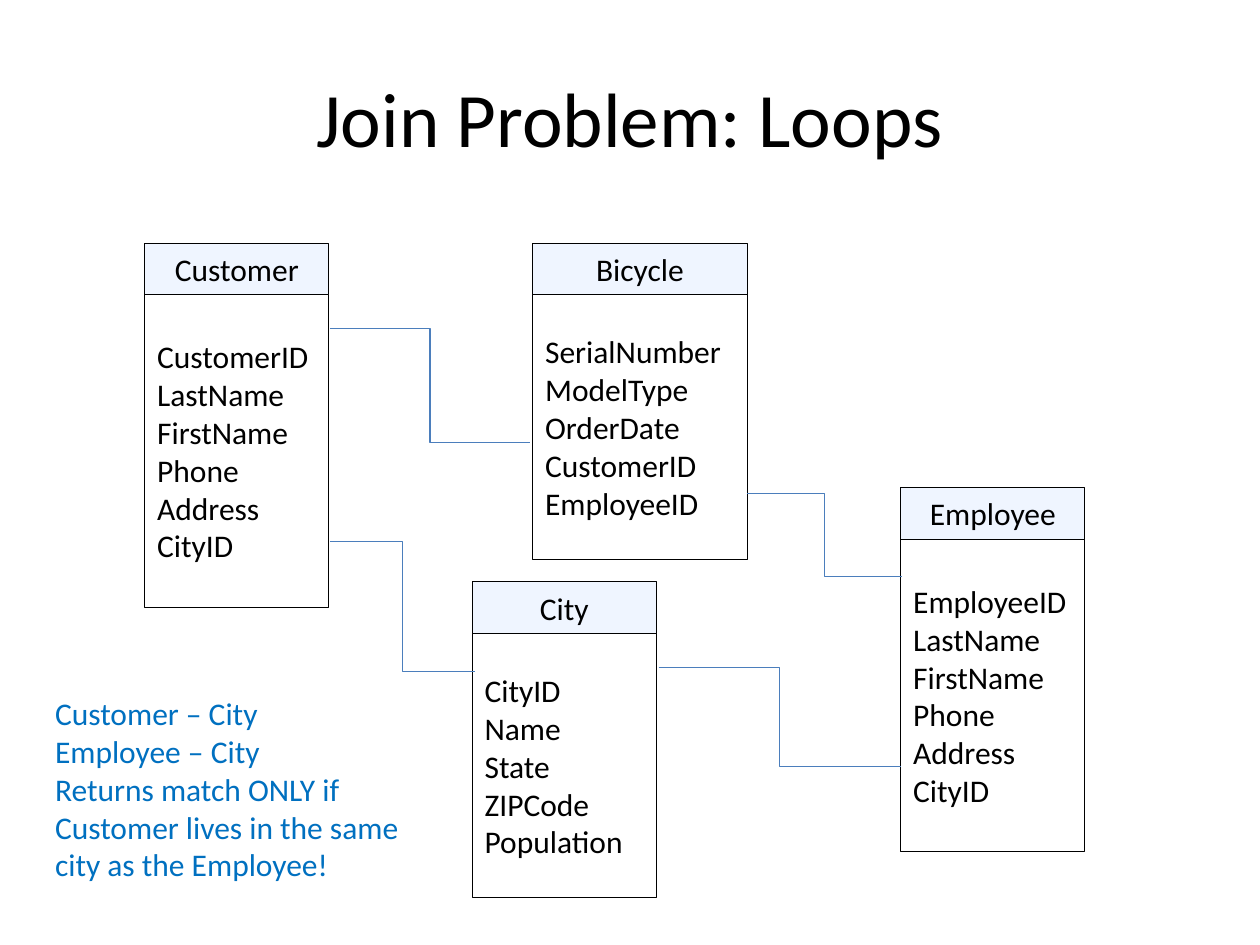
from lxml.etree import SubElement
from pptx import Presentation
from pptx.dml.color import RGBColor
from pptx.enum.shapes import MSO_CONNECTOR as Link, MSO_SHAPE as Shape
from pptx.enum.text import MSO_ANCHOR as Anchor, MSO_AUTO_SIZE as AutoSize, PP_ALIGN as Align
from pptx.oxml.ns import qn
from pptx.util import Cm, Pt

# Content
TITLE = "Join Problem: Loops"
PERSON_FIELDS = ["LastName", "FirstName", "Phone", "Address", "CityID"]
# name, left, top, width (cm), fields
ENTITIES = [
    ("Customer", 2.92, 4.9, 3.71, ["CustomerID"] + PERSON_FIELDS),
    ("Bicycle", 10.74, 4.9, 4.32,
     ["SerialNumber", "ModelType", "OrderDate", "CustomerID", "EmployeeID"]),
    ("City", 9.52, 11.73, 3.71,
     ["CityID", "Name", "State", "ZIPCode", "Population"]),
    ("Employee", 18.16, 9.83, 3.71, ["EmployeeID"] + PERSON_FIELDS),
]
# start x, start y, end x, end y (cm)
JOINS = [
    (6.65, 6.63, 10.69, 8.92),    # Customer to Bicycle
    (15.06, 9.95, 18.19, 11.62),  # Bicycle to Employee
    (6.65, 10.92, 9.58, 13.54),   # Customer to City
    (13.28, 13.46, 18.16, 15.45), # City to Employee
]
NOTE = [
    "Customer – City",
    "Employee – City",
    "Returns match ONLY if Customer lives in the same city as the Employee!",
]

COLORS = {"text": "000000", "border": "000000", "header": "EFF5FF",
          "join": "4B7EBC", "note": "0070C0"}
FONT = "Calibri"
HEADER_HEIGHT = 1.04
ROW_HEIGHT = 0.97
BODY_PADDING = -0.48


def color(name):
    return RGBColor.from_string(COLORS[name])


def write(frame, lines, size=18, ink="text", align=Align.LEFT):
    frame.word_wrap = True
    for index, line in enumerate(lines):
        para = frame.paragraphs[0] if index == 0 else frame.add_paragraph()
        para.text = line
        para.alignment = align
        para.font.size = Pt(size)
        para.font.name = FONT
        para.font.color.rgb = color(ink)


def add_box(slide, left, top, width, height, lines, fill=None, align=Align.LEFT):
    box = slide.shapes.add_shape(
        Shape.RECTANGLE, Cm(left), Cm(top), Cm(width), Cm(height))
    box.shadow.inherit = False
    if fill:
        box.fill.solid()
        box.fill.fore_color.rgb = color(fill)
    else:
        box.fill.background()
    box.line.color.rgb = color("border")
    box.line.width = Pt(0.5)
    box.text_frame.vertical_anchor = Anchor.MIDDLE
    write(box.text_frame, lines, align=align)


def add_entity(slide, name, left, top, width, fields):
    body_height = ROW_HEIGHT * len(fields) - BODY_PADDING
    add_box(slide, left, top + HEADER_HEIGHT, width, body_height, fields)
    add_box(slide, left, top, width, HEADER_HEIGHT, [name], "header", Align.CENTER)


def add_join(slide, *ends):
    join = slide.shapes.add_connector(Link.ELBOW, *[Cm(end) for end in ends])
    join.line.color.rgb = color("join")
    join.line.width = Pt(0.75)
    SubElement(join.element.spPr, qn("a:effectLst"))


def main():
    deck = Presentation()
    deck.slide_width, deck.slide_height = Cm(25.4), Cm(19.05)
    slide = deck.slides.add_slide(deck.slide_layouts[5])

    # Title
    title = slide.shapes.title
    title.left, title.top, title.width, title.height = (
        Cm(1.27), Cm(0.76), Cm(22.86), Cm(3.18))
    title.text_frame.vertical_anchor = Anchor.MIDDLE
    write(title.text_frame, [TITLE], size=44, align=Align.CENTER)

    # Tables of the data model and their joins
    for entity in ENTITIES:
        add_entity(slide, *entity)
    for join in JOINS:
        add_join(slide, *join)

    # Note
    note = slide.shapes.add_textbox(Cm(0.86), Cm(13.87), Cm(7.44), Cm(4.11))
    write(note.text_frame, NOTE, ink="note")
    note.text_frame.auto_size = AutoSize.SHAPE_TO_FIT_TEXT

    deck.save("out.pptx")


if __name__ == "__main__":
    main()
